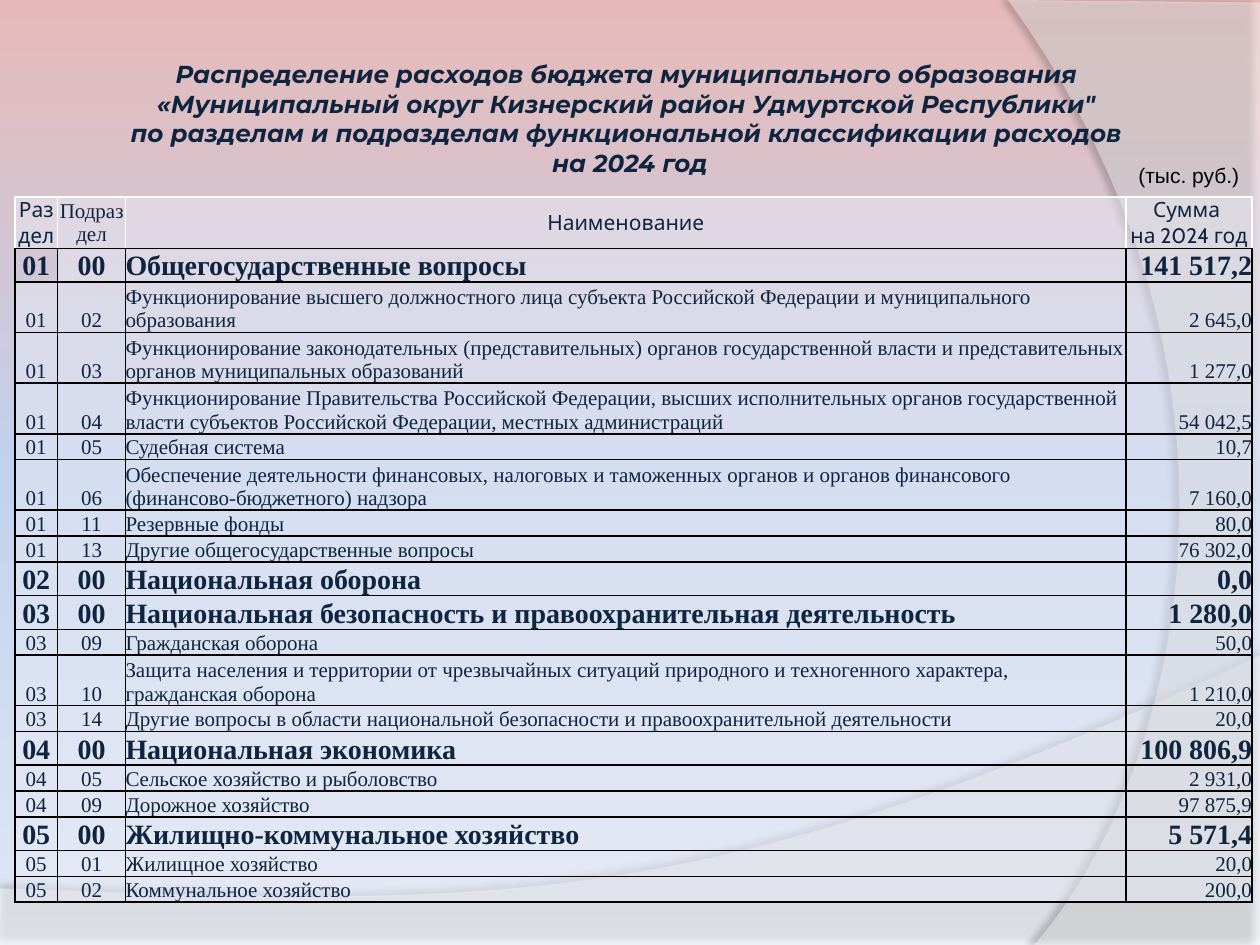
from dataclasses import dataclass
from typing import NamedTuple

from pptx import Presentation, util as u
from pptx.dml.color import RGBColor
from pptx.enum import text as t
from pptx.oxml import parse_xml
from pptx.oxml.ns import nsdecls, qn

Cm, Pt = u.Cm, u.Pt
LEFT, MID, RIGHT = t.PP_ALIGN.LEFT, t.PP_ALIGN.CENTER, t.PP_ALIGN.RIGHT


@dataclass(frozen=True)
class Theme:
    ink: str = "0F243E"
    black: str = "000000"
    white: str = "FFFFFF"
    cell: str = "E9EBF5"
    sky: tuple = ((0, "E6B9B8"), (50, "C2D1ED"), (100, "E1E8F5"))
    head: str = "Montserrat"
    label: str = "Cabin"
    body: str = "Times New Roman"
    note: str = "Arial"
    title: int = 14
    group: int = 16
    base: int = 12


class Font(NamedTuple):
    name: str
    size: int
    color: str
    bold: bool = False
    slant: bool = False


class Item(NamedTuple):
    part: str
    sub: str
    name: str
    total: str


class Wave(NamedTuple):
    """Straight edges, then a cubic curve from the last corner (cm)."""
    edge: tuple
    curve: tuple
    alpha: int
    shade: int
    dist: float
    angle: int


TH = Theme()
TITLE = Font(TH.head, TH.title, TH.ink, True, True)
LABEL = Font(TH.label, TH.base, TH.ink)
BODY = Font(TH.body, TH.base, TH.ink)
GROUP = Font(TH.body, TH.group, TH.ink, True)
NOTE = Font(TH.note, TH.base, TH.black)

WAVES = (
    Wave(((0, 17.91), (0, 19.05), (25.4, 19.05), (25.4, 13.21)),
         ((14.2, 18.52), (9.93, 18.26), (0, 17.91)), 45, 35, 3.5, 270),
    Wave(((25.4, 0.05), (25.4, 19.05), (20.85, 19.05)),
         ((23.75, 15.72), (25.86, 7.62), (20.32, 0)), 40, 45, 4, 180),
)
HEADING = """Распределение расходов бюджета муниципального образования 
«Муниципальный округ Кизнерский район Удмуртской Республики" 
по разделам и подразделам функциональной классификации расходов 
на 2024 год"""
HEADS = ("Раз дел", "Подраздел", "Наименование", "Сумма \nна 2024 год")
COLS = (0.86, 1.37, 20.17, 2.54)
ITEMS = [Item(*row) for row in (
    ("01", "00", "Общегосударственные вопросы", "141 517,2"),
    ("01", "02", "Функционирование высшего должностного лица субъекта Российской Федерации "
     "и муниципального образования", "2 645,0"),
    ("01", "03", "Функционирование законодательных (представительных) органов государственной "
     "власти и представительных органов муниципальных образований", "1 277,0"),
    ("01", "04", "Функционирование Правительства Российской Федерации, высших исполнительных "
     "органов государственной власти субъектов Российской Федерации, местных администраций",
     "54 042,5"),
    ("01", "05", "Судебная система", "10,7"),
    ("01", "06", "Обеспечение деятельности финансовых, налоговых и таможенных органов "
     "и органов финансового (финансово-бюджетного) надзора", "7 160,0"),
    ("01", "11", "Резервные фонды", "80,0"),
    ("01", "13", "Другие общегосударственные вопросы", "76 302,0"),
    ("02", "00", "Национальная оборона", "0,0"),
    ("03", "00", "Национальная безопасность и правоохранительная деятельность", "1 280,0"),
    ("03", "09", "Гражданская оборона", "50,0"),
    ("03", "10", "Защита населения и территории от чрезвычайных ситуаций природного "
     "и техногенного характера, гражданская оборона", "1 210,0"),
    ("03", "14", "Другие вопросы в области национальной безопасности "
     "и правоохранительной деятельности", "20,0"),
    ("04", "00", "Национальная экономика", "100 806,9"),
    ("04", "05", "Сельское хозяйство и рыболовство", "2 931,0"),
    ("04", "09", "Дорожное хозяйство", "97 875,9"),
    ("05", "00", "Жилищно-коммунальное хозяйство", "5 571,4"),
    ("05", "01", "Жилищное хозяйство", "20,0"),
    ("05", "02", "Коммунальное хозяйство", "200,0"),
)]
TALL, BIG, SLIM = 1.02, 0.68, 0.52
LONG = 90  # names above this length take two lines


def write(frame, words: str, font: Font, align) -> None:
    frame.text = words
    for para in frame.paragraphs:
        para.alignment = align
        for run in para.runs:
            face = run.font
            face.name, face.size = font.name, Pt(font.size)
            face.bold, face.italic = font.bold, font.slant
            face.color.rgb = RGBColor.from_string(font.color)


def tint(fill, owner, color: str, alpha: int) -> None:
    """Solid fill with an opacity in percent; owner is the fill's XML parent."""
    fill.solid()
    fill.fore_color.rgb = RGBColor.from_string(color)
    node = owner.find(qn("a:solidFill"))[0]
    node.append(parse_xml(f'<a:alpha {nsdecls("a")} val="{alpha * 1000}"/>'))


def paint(slide) -> None:
    """Three-stop vertical gradient behind the slide."""
    slide.background.fill.solid()
    holder = slide.element.find(".//" + qn("p:bgPr"))
    stops = "".join(f'<a:gs pos="{pos * 1000}"><a:srgbClr val="{color}"/></a:gs>'
                    for pos, color in TH.sky)
    holder.replace(holder[0], parse_xml(
        f'<a:gradFill {nsdecls("a")} rotWithShape="1"><a:gsLst>{stops}</a:gsLst>'
        '<a:lin ang="5400000" scaled="0"/></a:gradFill>'))


def bend(start: tuple, curve: tuple, steps: int = 40) -> list:
    """Points along a cubic Bézier curve."""
    dots = []
    for step in range(1, steps + 1):
        k = step / steps
        mix = ((1 - k) ** 3, 3 * k * (1 - k) ** 2, 3 * k * k * (1 - k), k ** 3)
        dots.append(tuple(sum(m * p[axis] for m, p in zip(mix, (start, *curve)))
                          for axis in (0, 1)))
    return dots


def draw_wave(slide, wave: Wave) -> None:
    dots = [(Cm(x), Cm(y)) for x, y in (*wave.edge, *bend(wave.edge[-1], wave.curve))]
    pen = slide.shapes.build_freeform(*dots[0])
    pen.add_line_segments(dots[1:], close=True)
    shape = pen.convert_to_shape()
    props = shape.element.spPr
    tint(shape.fill, props, TH.white, wave.alpha)
    shape.line.fill.background()
    props.append(parse_xml(
        f'<a:effectLst {nsdecls("a")}><a:outerShdw blurRad="{Pt(4)}" dist="{Pt(wave.dist)}" '
        f'dir="{wave.angle * 60000}" algn="tl" rotWithShape="0"><a:srgbClr val="{TH.black}">'
        f'<a:alpha val="{wave.shade * 1000}"/></a:srgbClr></a:outerShdw></a:effectLst>'))


def edge(cell, head: bool) -> None:
    props = cell._tc.get_or_add_tcPr()
    for side in "LRTB":
        color = TH.white if head and side != "B" else TH.black
        props.append(parse_xml(
            f'<a:ln{side} {nsdecls("a")} w="{Pt(1)}"><a:solidFill>'
            f'<a:srgbClr val="{color}"/></a:solidFill></a:ln{side}>'))


def fill_row(table, row: int, words: tuple, fonts: tuple, aligns: tuple, high: float) -> None:
    table.rows[row].height = Cm(high)
    for col, (word, font, align) in enumerate(zip(words, fonts, aligns)):
        cell = table.cell(row, col)
        cell.margin_left = cell.margin_right = cell.margin_top = cell.margin_bottom = 0
        cell.vertical_anchor = t.MSO_ANCHOR.BOTTOM if row else t.MSO_ANCHOR.MIDDLE
        write(cell.text_frame, word, font, align)
        edge(cell, row == 0)
        if (row, col) == (1, 0):
            cell.fill.background()
        else:
            tint(cell.fill, cell._tc.tcPr, TH.cell, 50)


def add_budget(slide) -> None:
    table = slide.shapes.add_table(len(ITEMS) + 1, len(COLS), Cm(0.3), Cm(3.97),
                                   Cm(sum(COLS)), Cm(14.2)).table
    table.first_row = table.horz_banding = False
    for col, wide in zip(table.columns, COLS):
        col.width = Cm(wide)
    fill_row(table, 0, HEADS, (LABEL, BODY, LABEL, LABEL), (MID,) * 4, TALL)
    for row, item in enumerate(ITEMS, 1):
        group = item.sub == "00"
        high = BIG if group else TALL if len(item.name) > LONG else SLIM
        fill_row(table, row, item, (GROUP if group else BODY,) * 4,
                 (MID, MID, LEFT, RIGHT), high)


def main() -> None:
    deck = Presentation()
    deck.slide_width, deck.slide_height = Cm(25.4), Cm(19.05)
    slide = deck.slides.add_slide(deck.slide_layouts[5])
    paint(slide)
    for wave in WAVES:
        draw_wave(slide, wave)

    title = slide.shapes.title
    title.left, title.top, title.width, title.height = Cm(0), Cm(1.07), Cm(25.4), Cm(2.64)
    title.text_frame.auto_size = t.MSO_AUTO_SIZE.NONE
    title.text_frame.vertical_anchor = t.MSO_ANCHOR.TOP
    write(title.text_frame, HEADING, TITLE, MID)
    slide.shapes[-1].element.addnext(title.element)

    add_budget(slide)
    unit = slide.shapes.add_textbox(Cm(22.7), Cm(3.15), Cm(2.57), Cm(0.76))
    unit.text_frame.word_wrap = False
    write(unit.text_frame, "(тыс. руб.)", NOTE, LEFT)
    deck.save("out.pptx")


if __name__ == "__main__":
    main()
